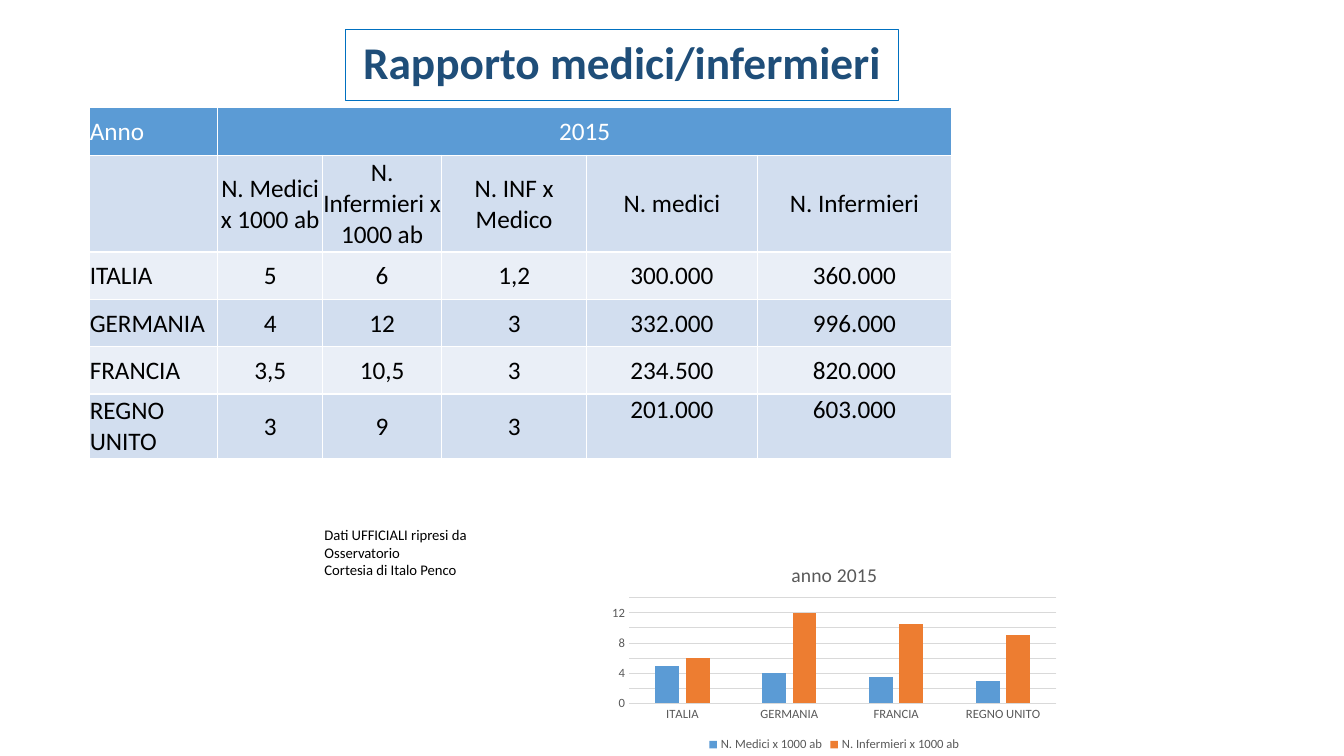
from pptx import Presentation
from pptx.chart.data import CategoryChartData
from pptx.dml.color import RGBColor
from pptx.enum.chart import XL_CHART_TYPE, XL_LEGEND_POSITION, XL_TICK_MARK
from pptx.enum.text import MSO_ANCHOR, MSO_AUTO_SIZE, PP_ALIGN
from pptx.util import Emu, Pt

CLUSTERED = XL_CHART_TYPE.COLUMN_CLUSTERED
BOTTOM = XL_LEGEND_POSITION.BOTTOM
NO_TICK = XL_TICK_MARK.NONE
MIDDLE, TOP = MSO_ANCHOR.MIDDLE, MSO_ANCHOR.TOP
LEFT, CENTER = PP_ALIGN.LEFT, PP_ALIGN.CENTER
NO_AUTOFIT = MSO_AUTO_SIZE.NONE

EMU_PER_PX = 9144  # 100 px to the inch
TITLE_ONLY_LAYOUT = 5
FONT = "Calibri"
COLORS = {
    "title": "1F4E79", "title_line": "0070C0", "text": "000000",
    "header": "5B9BD5", "header_text": "FFFFFF",
    "band_dark": "D2DEEF", "band_light": "EAEFF7",
    "doctors": "5B9BD5", "nurses": "ED7D31",
    "chart_text": "595959", "grid": "D9D9D9",
}

COLUMN_WIDTHS = [127, 104, 118, 144, 169, 193]
ROW_HEIGHTS = [47, 96, 47, 47, 47, 64]
TABLE_ROWS = [
    ["Anno", "2015", "", "", "", ""],
    ["", "N. Medici x 1000 ab", "N. Infermieri x 1000 ab", "N. INF x Medico",
     "N. medici", "N. Infermieri"],
    ["ITALIA", "5", "6", "1,2", "300.000", "360.000"],
    ["GERMANIA", "4", "12", "3", "332.000", "996.000"],
    ["FRANCIA", "3,5", "10,5", "3", "234.500", "820.000"],
    ["REGNO UNITO", "3", "9", "3", "201.000", "603.000"],
]
COUNTRIES = [row[0] for row in TABLE_ROWS[2:]]
CHART_SERIES = [
    ("N. Medici x 1000 ab", (5, 4, 3.5, 3), "doctors"),
    ("N. Infermieri x 1000 ab", (6, 12, 10.5, 9), "nurses"),
]
SOURCE_LINES = ["Dati UFFICIALI ripresi da Osservatorio", "Cortesia di Italo Penco"]


def px(length):
    return Emu(length * EMU_PER_PX)


def rgb(name):
    return RGBColor.from_string(COLORS[name])


def set_attributes(target, **values):
    for name, value in values.items():
        setattr(target, name, value)


def format_font(font, size, color, bold=False):
    set_attributes(font, name=FONT, size=Pt(size), bold=bold)
    font.color.rgb = rgb(color)


def format_line(line, color):
    line.color.rgb = rgb(color)
    line.width = Pt(0.75)


def add_title(slide, left, top, width, height):
    title = slide.shapes.title
    set_attributes(title, left=px(left), top=px(top), width=px(width), height=px(height))
    format_line(title.line, "title_line")
    frame = title.text_frame
    frame.text = "Rapporto medici/infermieri"
    set_attributes(frame, auto_size=NO_AUTOFIT, vertical_anchor=MIDDLE, word_wrap=True)
    paragraph = frame.paragraphs[0]
    set_attributes(paragraph, alignment=CENTER, line_spacing=0.9)
    format_font(paragraph.runs[0].font, 32.4, "title", bold=True)


def add_staff_table(slide, left, top):
    frame = slide.shapes.add_table(
        len(ROW_HEIGHTS), len(COLUMN_WIDTHS), px(left), px(top),
        px(sum(COLUMN_WIDTHS)), px(sum(ROW_HEIGHTS)))
    table = frame.table
    for column, width in zip(table.columns, COLUMN_WIDTHS):
        column.width = px(width)
    for row, height in zip(table.rows, ROW_HEIGHTS):
        row.height = px(height)
    last_row = len(TABLE_ROWS) - 1
    for row_index, texts in enumerate(TABLE_ROWS):
        band = "band_dark" if row_index % 2 else "band_light"
        is_header = row_index == 0
        for column_index, text in enumerate(texts):
            cell = table.cell(row_index, column_index)
            at_top = row_index == last_row and column_index >= 4
            cell.fill.solid()
            cell.fill.fore_color.rgb = rgb("header" if is_header else band)
            set_attributes(cell, text=text, margin_left=0, margin_right=0,
                           margin_top=px(1), margin_bottom=0,
                           vertical_anchor=TOP if at_top else MIDDLE)
            paragraph = cell.text_frame.paragraphs[0]
            paragraph.alignment = CENTER if column_index else LEFT
            format_font(paragraph.font, 18, "header_text" if is_header else "text")
            for run in paragraph.runs:
                format_font(run.font, 18, "header_text" if is_header else "text")
    table.cell(0, 1).merge(table.cell(0, len(COLUMN_WIDTHS) - 1))


def add_source_note(slide, left, top, width, height):
    box = slide.shapes.add_textbox(px(left), px(top), px(width), px(height))
    frame = box.text_frame
    frame.word_wrap = True
    frame.text = "\n".join(SOURCE_LINES)
    for paragraph in frame.paragraphs:
        format_font(paragraph.runs[0].font, 10.5, "text")


def add_staff_chart(slide, left, top, width, height):
    data = CategoryChartData()
    data.categories = COUNTRIES
    for name, values, _ in CHART_SERIES:
        data.add_series(name, values)
    chart = slide.shapes.add_chart(
        CLUSTERED, px(left), px(top), px(width), px(height), data).chart
    format_font(chart.font, 10, "text")

    chart.has_title = True
    chart.chart_title.text_frame.text = "anno 2015"
    title_run = chart.chart_title.text_frame.paragraphs[0].runs[0]
    format_font(title_run.font, 14, "chart_text")
    chart.chart_title.include_in_layout = False

    chart.has_legend = True
    set_attributes(chart.legend, position=BOTTOM, include_in_layout=False)
    format_font(chart.legend.font, 9, "chart_text")

    for axis in (chart.category_axis, chart.value_axis):
        set_attributes(axis, major_tick_mark=NO_TICK, minor_tick_mark=NO_TICK)
        format_font(axis.tick_labels.font, 9, "chart_text")
    format_line(chart.category_axis.format.line, "grid")
    chart.value_axis.format.line.fill.background()
    set_attributes(chart.value_axis, minimum_scale=0, maximum_scale=14, major_unit=2)
    format_line(chart.value_axis.major_gridlines.format.line, "grid")

    plot = chart.plots[0]
    set_attributes(plot, gap_width=219, overlap=-27, vary_by_categories=False)
    for series, (_, _, color) in zip(plot.series, CHART_SERIES):
        series.format.fill.solid()
        series.format.fill.fore_color.rgb = rgb(color)


def main():
    presentation = Presentation()
    set_attributes(presentation, slide_width=px(1333), slide_height=px(750))
    slide = presentation.slides.add_slide(presentation.slide_layouts[TITLE_ONLY_LAYOUT])
    add_title(slide, 343, 29, 548, 71)
    add_staff_chart(slide, 598, 544, 459, 206)
    add_staff_table(slide, 89, 107)
    add_source_note(slide, 312, 517, 177, 63)
    presentation.save("out.pptx")


if __name__ == "__main__":
    main()
